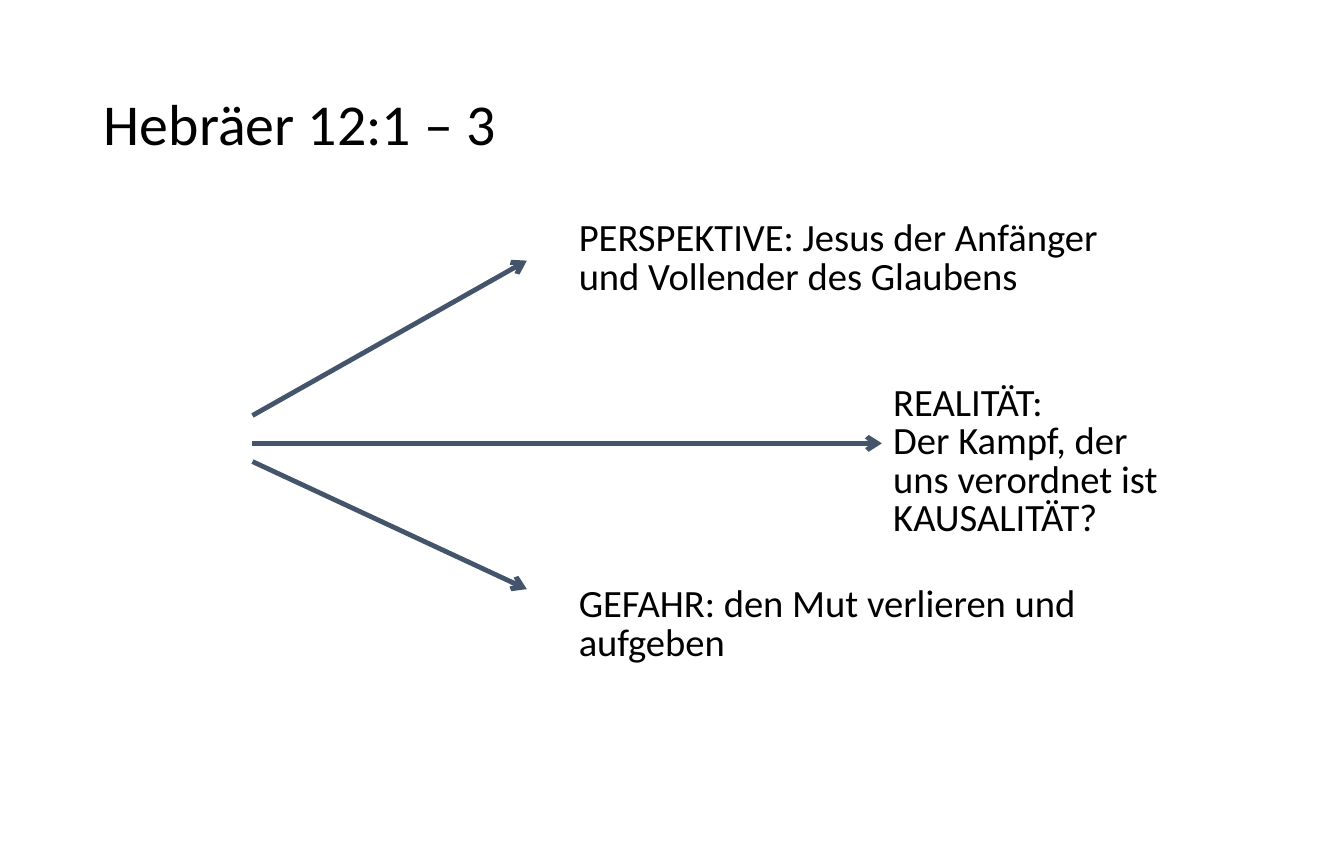
from lxml import etree
from pptx import Presentation
from pptx import util as u
from pptx.dml.color import RGBColor
from pptx.enum import shapes, text
from pptx.oxml.ns import qn

BLACK, SLATE = "000000", "44546A"
ARROW_START, BRANCH_END, REALITY_LEFT = 5.54, 11.56, 19.35
BRANCH_LEFT, BRANCH_WIDTH, BRANCH_HEIGHT = 12.45, 11.91, 1.96


def color(hex_value):
    return RGBColor.from_string(hex_value)


def set_attrs(obj, values):
    for name, value in values.items():
        setattr(obj, name, value)


def add_text(s, box, paragraphs, size, spacing, frame):
    """Add a text box; a newline inside a paragraph is a line break."""
    tf = s.shapes.add_textbox(*map(u.Cm, box)).text_frame
    set_attrs(tf, {"word_wrap": True, **frame})
    for i, content in enumerate(paragraphs):
        p = tf.add_paragraph() if i else tf.paragraphs[0]
        p.text = content
        p.line_spacing = spacing
        for r in p.runs:
            set_attrs(r.font, {"name": "Calibri", "size": u.Pt(size)})
            r.font.color.rgb = color(BLACK)


def add_note(s, box, *paragraphs):
    add_text(s, box, paragraphs, 24, u.Pt(24),
             {"auto_size": text.MSO_AUTO_SIZE.SHAPE_TO_FIT_TEXT})


def add_arrow(s, *ends):
    cn = s.shapes.add_connector(shapes.MSO_CONNECTOR.STRAIGHT, *map(u.Cm, ends))
    cn.line.width = u.Pt(3)
    cn.line.color.rgb = color(SLATE)
    etree.SubElement(cn.line._get_or_add_ln(), qn("a:tailEnd"), type="arrow")
    etree.SubElement(cn._element.spPr, qn("a:effectLst"))


def main():
    prs = Presentation()
    set_attrs(prs, {"slide_width": u.Cm(29.49), "slide_height": u.Cm(19.05)})
    s = prs.slides.add_slide(prs.slide_layouts[6])

    add_text(s, (2.03, 1.75, 26.57, 2.08), ["Hebräer 12:1 – 3"], 36, 0.9,
             {"vertical_anchor": text.MSO_ANCHOR.MIDDLE})

    for start_y, end_x, end_y in ((9.73, REALITY_LEFT, 9.73),
                                  (10.13, BRANCH_END, 12.93),
                                  (9.12, BRANCH_END, 5.72)):
        add_arrow(s, ARROW_START, start_y, end_x, end_y)

    add_note(s, (REALITY_LEFT, 8.33, 7.01, 3.68),
             "REALITÄT:", "Der Kampf, der uns verordnet ist\nKAUSALITÄT?")
    for top, content in (
            (4.72, "PERSPEKTIVE: Jesus der Anfänger und Vollender des Glaubens"),
            (12.75, "GEFAHR: den Mut verlieren und aufgeben")):
        add_note(s, (BRANCH_LEFT, top, BRANCH_WIDTH, BRANCH_HEIGHT), content)

    prs.save("out.pptx")


if __name__ == "__main__":
    main()
